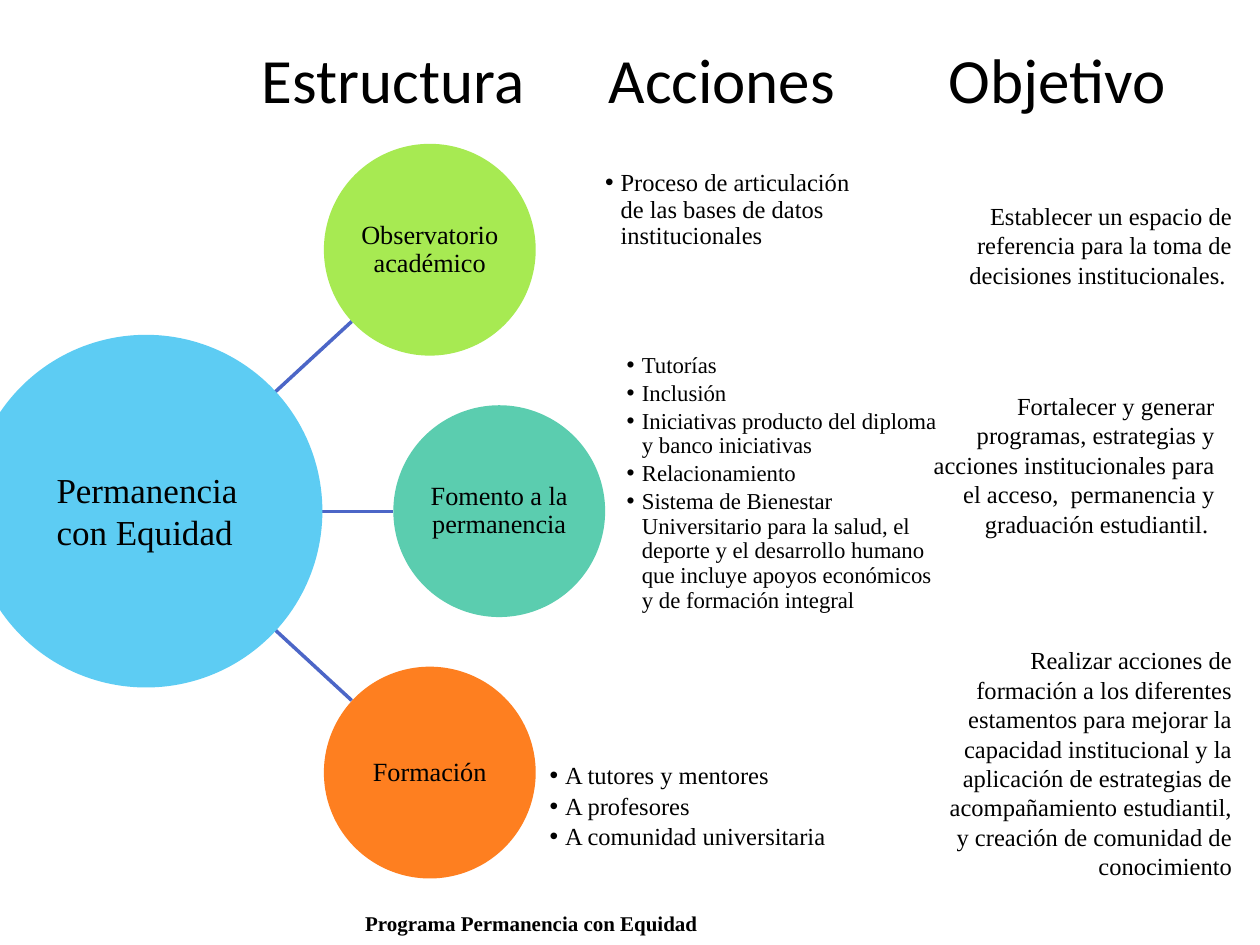
from lxml import etree
from pptx import Presentation
from pptx.dml.color import RGBColor
from pptx.enum import shapes, text
from pptx.oxml.ns import qn
from pptx.util import Cm, Pt

INK = {"text": "000000", "line": "4C66C7", "hub": "5DCCF3",
       "lime": "A7EA52", "teal": "5BCDAF", "orange": "FE7F20"}
SERIF, SANS = "Times New Roman", "Calibri"
HEADS = ["Estructura", "Acciones", "Objetivo"]
TABS = [2.92, 9.91, 16.76]
HUB = ["Permanencia", "con Equidad"]
NODES = [("Observatorio académico", "lime", 6.53, 2.9),
         ("Fomento a la permanencia", "teal", 7.93, 8.17),
         ("Formación", "orange", 6.53, 13.44)]
SPOKES = [(8, 7.09, 6.48), (10.31, 7.93, 10.31), (12.6, 7.09, 14.12)]
LISTS = [
    ((12.2, 2.9, 5.41, 2.67), 14, 0,
     ["Proceso de articulación de las bases de datos institucionales"]),
    ((12.63, 7.19, 6.4, 5.11), 13, 1.9,
     ["Tutorías", "Inclusión",
      "Iniciativas producto del diploma y banco iniciativas",
      "Relacionamiento",
      "Sistema de Bienestar Universitario para la salud, el deporte y el "
      "desarrollo humano que incluye apoyos económicos y de formación integral"]),
    ((11.08, 14.82, 6.4, 2.9), 14, 2.1,
     ["A tutores y mentores", "A profesores", "A comunidad universitaria"]),
]
GOALS = [
    ((18.56, 3.92, 6.53, 2.06),
     "Establecer un espacio de referencia para la toma de decisiones "
     "institucionales. "),
    ((18.54, 7.75, 6.2, 3.53),
     "Fortalecer y generar programas, estrategias y acciones institucionales "
     "para el acceso,  permanencia y graduación estudiantil. "),
    ((18.56, 12.88, 6.53, 5.11),
     "Realizar acciones de formación a los diferentes estamentos para mejorar "
     "la capacidad institucional y la aplicación de estrategias de "
     "acompañamiento estudiantil, y creación de comunidad de conocimiento"),
]
CAPTION = "Programa Permanencia con Equidad"
LEFT, MID, RIGHT = text.PP_ALIGN.LEFT, text.PP_ALIGN.CENTER, text.PP_ALIGN.RIGHT
TOP, CORE = text.MSO_ANCHOR.TOP, text.MSO_ANCHOR.MIDDLE


def place(item, box):
    item.left, item.top, item.width, item.height = map(Cm, box)


def write(item, lines, size, align=LEFT, anchor=CORE, pad=(0.25, 0.13),
          lead=1, gap=0, font=SERIF, bold=False, dots=False, tabs=()):
    frame = item.text_frame
    frame.text = "\n".join(lines)
    frame.word_wrap = True
    frame.auto_size = text.MSO_AUTO_SIZE.NONE
    frame.vertical_anchor = anchor
    frame.margin_left = frame.margin_right = Cm(pad[0])
    frame.margin_top = frame.margin_bottom = Cm(pad[1])
    for i, para in enumerate(frame.paragraphs):
        para.alignment, para.line_spacing = align, lead
        para.space_before, para.space_after = Pt(gap if i else 0), Pt(0)
        props = para._p.get_or_add_pPr()
        if dots:
            props.set("marL", str(Cm(0.31)))
            props.set("indent", str(-Cm(0.31)))
            etree.SubElement(props, qn("a:buFont"), typeface="Arial")
            etree.SubElement(props, qn("a:buChar"), char="•")
        if tabs:
            stops = etree.SubElement(props, qn("a:tabLst"))
            for stop in tabs:
                etree.SubElement(stops, qn("a:tab"), pos=str(Cm(stop)), algn="l")
        for run in para.runs:
            face = run.font
            face.name, face.size, face.bold = font, Pt(size), bold
            face.color.rgb = RGBColor.from_string(INK["text"])


def label(slide, box, *args, **style):
    write(slide.shapes.add_textbox(*map(Cm, box)), *args, **style)


def disc(slide, left, top, size, tone):
    item = slide.shapes.add_shape(shapes.MSO_SHAPE.OVAL,
                                  *map(Cm, (left, top, size, size)))
    item.shadow.inherit = False
    item.fill.solid()
    item.fill.fore_color.rgb = RGBColor.from_string(INK[tone])
    item.line.fill.background()
    return item


def spoke(slide, *ends):
    item = slide.shapes.add_connector(shapes.MSO_CONNECTOR.STRAIGHT,
                                      *map(Cm, ends))
    item.line.color.rgb = RGBColor.from_string(INK["line"])
    item.line.width = Pt(2)
    etree.SubElement(item._element.spPr, qn("a:effectLst"))


def main():
    """Build the slide on structure, actions and goals."""
    deck = Presentation()
    deck.slide_width, deck.slide_height = Cm(25.4), Cm(19.05)
    slide = deck.slides.add_slide(deck.slide_layouts[4])
    title, *bodies = slide.placeholders
    place(title, (2.11, 0, 22.86, 3.15))
    write(title, ["\t" + "\t".join(HEADS)], 36, font=SANS, tabs=TABS)

    for start, right, end in SPOKES:
        spoke(slide, 5.44, start, right, end)
    disc(slide, -0.61, 6.75, 7.11, "hub")
    label(slide, (0.89, 9.32, 4.6, 1.96), HUB, 20, anchor=TOP)
    for name, tone, left, top in NODES:
        node = disc(slide, left, top, 4.27, tone)
        write(node, [name], 15, MID, pad=(0.03, 0.03), lead=0.9)

    for body, (box, size, gap, lines) in zip(bodies, LISTS):
        place(body, box)
        write(body, lines, size, pad=(0, 0), lead=0.9, gap=gap, dots=True)
    for spare in bodies[len(LISTS):]:
        spare._element.getparent().remove(spare._element)

    for box, goal in GOALS:
        label(slide, box, [goal], 14, RIGHT, TOP)
    label(slide, (6.69, 18.1, 8.05, 1.02), [CAPTION], 12, MID, bold=True)
    deck.save("out.pptx")


if __name__ == "__main__":
    main()
